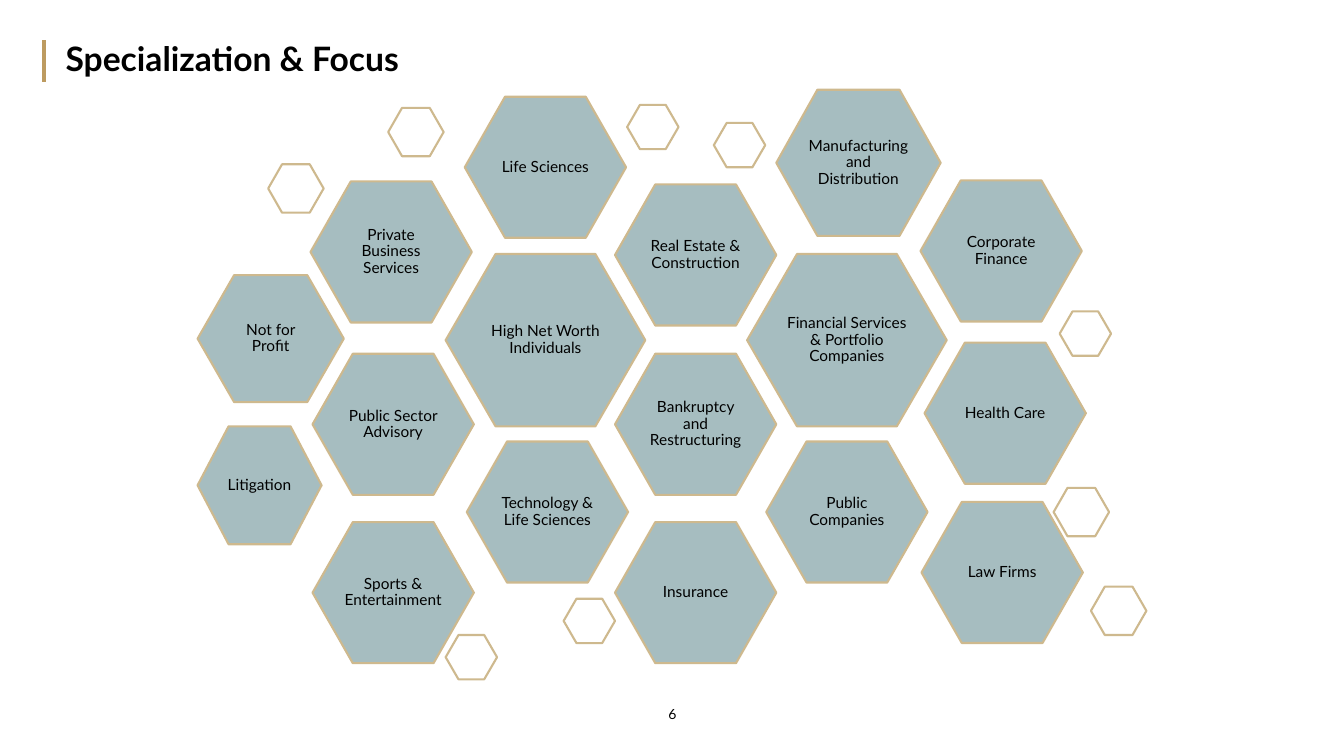
from pptx import Presentation
from pptx import util as u
from pptx.dml.color import RGBColor
from pptx.enum import shapes, text
from pptx.oxml.ns import qn
from lxml import etree


def color(code):
    return RGBColor.from_string(code)


class Page:
    font = "Lato"
    ink = "000000"
    fill = "A6BDC0"
    outline = "CEB98E"
    accent = "BD9B60"

    def __init__(self, deck):
        self.slide = deck.slides.add_slide(deck.slide_layouts[5])

    def set_text(self, shape, words, size, align, inset=None, bold=False):
        frame = shape.text_frame
        frame.text = words
        frame.word_wrap = True
        frame.auto_size = text.MSO_AUTO_SIZE.NONE
        frame.vertical_anchor = text.MSO_ANCHOR.MIDDLE
        if inset is not None:
            frame.margin_left = frame.margin_right = u.Inches(inset)
            frame.margin_top = frame.margin_bottom = u.Inches(inset)
        para = frame.paragraphs[0]
        para.alignment = align
        para.line_spacing = 0.9
        font = para.runs[0].font
        font.name = self.font
        font.size = u.Pt(size)
        font.bold = bold
        font.color.rgb = color(self.ink)

    def title(self, words, left, top, width, height):
        box = self.slide.shapes.title
        box.left, box.top = u.Inches(left), u.Inches(top)
        box.width, box.height = u.Inches(width), u.Inches(height)
        self.set_text(box, words, 24, text.PP_ALIGN.LEFT, bold=True)

    def label(self, words, left, top, width, height):
        box = self.slide.shapes.add_textbox(
            u.Inches(left), u.Inches(top), u.Inches(width), u.Inches(height))
        self.set_text(box, words, 10, text.PP_ALIGN.CENTER)
        box.text_frame.vertical_anchor = text.MSO_ANCHOR.TOP
        box.text_frame.paragraphs[0].line_spacing = 1.0

    def bar(self, x, top, bottom):
        line = self.slide.shapes.add_connector(
            shapes.MSO_CONNECTOR.STRAIGHT,
            u.Inches(x), u.Inches(top), u.Inches(x), u.Inches(bottom))
        line.line.color.rgb = color(self.accent)
        line.line.width = u.Pt(3)
        etree.SubElement(line._element.spPr, qn("a:effectLst"))

    def hexagon(self, left, top, width, height, words=None, inset=0.02):
        cell = self.slide.shapes.add_shape(
            shapes.MSO_SHAPE.HEXAGON,
            u.Inches(left), u.Inches(top), u.Inches(width), u.Inches(height))
        # The slanted sides each take a quarter of the width
        cell.adjustments[0] = width / height / 4
        cell.shadow.inherit = False
        cell.line.color.rgb = color(self.outline)
        cell.line.width = u.Pt(1.5)
        if words is None:
            cell.fill.background()
            return
        cell.fill.solid()
        cell.fill.fore_color.rgb = color(self.fill)
        self.set_text(cell, words, 11, text.PP_ALIGN.CENTER, inset)


REGULAR = (1.6, 1.4)
LARGE = (1.98, 1.71)

SPECIALTIES = [
    ("Not for Profit", 1.96, 2.73, (1.45, 1.26), 0.06),
    ("Litigation", 1.96, 4.23, (1.23, 1.17)),
    ("Private Business Services", 3.08, 1.8, REGULAR),
    ("Public Sector Advisory", 3.1, 3.51, REGULAR),
    ("Sports & Entertainment", 3.1, 5.18, REGULAR),
    ("Life Sciences", 4.61, 0.96, REGULAR),
    ("High Net Worth Individuals", 4.42, 2.52, LARGE),
    ("Technology & Life Sciences", 4.63, 4.38, REGULAR),
    ("Real Estate & Construction", 6.1, 1.83, REGULAR),
    ("Bankruptcy and Restructuring", 6.1, 3.51, REGULAR),
    ("Insurance", 6.1, 5.18, REGULAR),
    ("Manufacturing and Distribution", 7.7, 0.89, (1.63, 1.45)),
    ("Financial Services & Portfolio Companies", 7.41, 2.52, LARGE),
    ("Public Companies", 7.6, 4.38, REGULAR),
    ("Corporate Finance", 9.13, 1.79, REGULAR),
    ("Health Care", 9.17, 3.4, REGULAR),
    ("Law Firms", 9.14, 4.98, REGULAR),
]

# Empty hexagons, grouped by size
ACCENTS = {
    (0.51, 0.44): [(4.42, 6.3), (5.59, 5.94), (6.22, 1.04),
                   (7.08, 1.22), (10.51, 3.09)],
    (0.55, 0.48): [(2.66, 1.63), (3.85, 1.07), (10.45, 4.84), (10.82, 5.82)],
}


def main():
    deck = Presentation()
    deck.slide_width, deck.slide_height = u.Inches(13.33), u.Inches(7.5)
    page = Page(deck)

    # Heading and page number
    page.bar(0.44, 0.4, 0.81)
    page.title("Specialization & Focus", 0.55, 0.4, 12.33, 0.41)
    page.label("6", 5.17, 6.95, 3, 0.4)

    # Specialties
    for words, left, top, size, *inset in SPECIALTIES:
        page.hexagon(left, top, *size, words, *inset)

    # Decorative outlines
    for size, corners in ACCENTS.items():
        for left, top in corners:
            page.hexagon(left, top, *size)

    deck.save("out.pptx")


if __name__ == "__main__":
    main()
